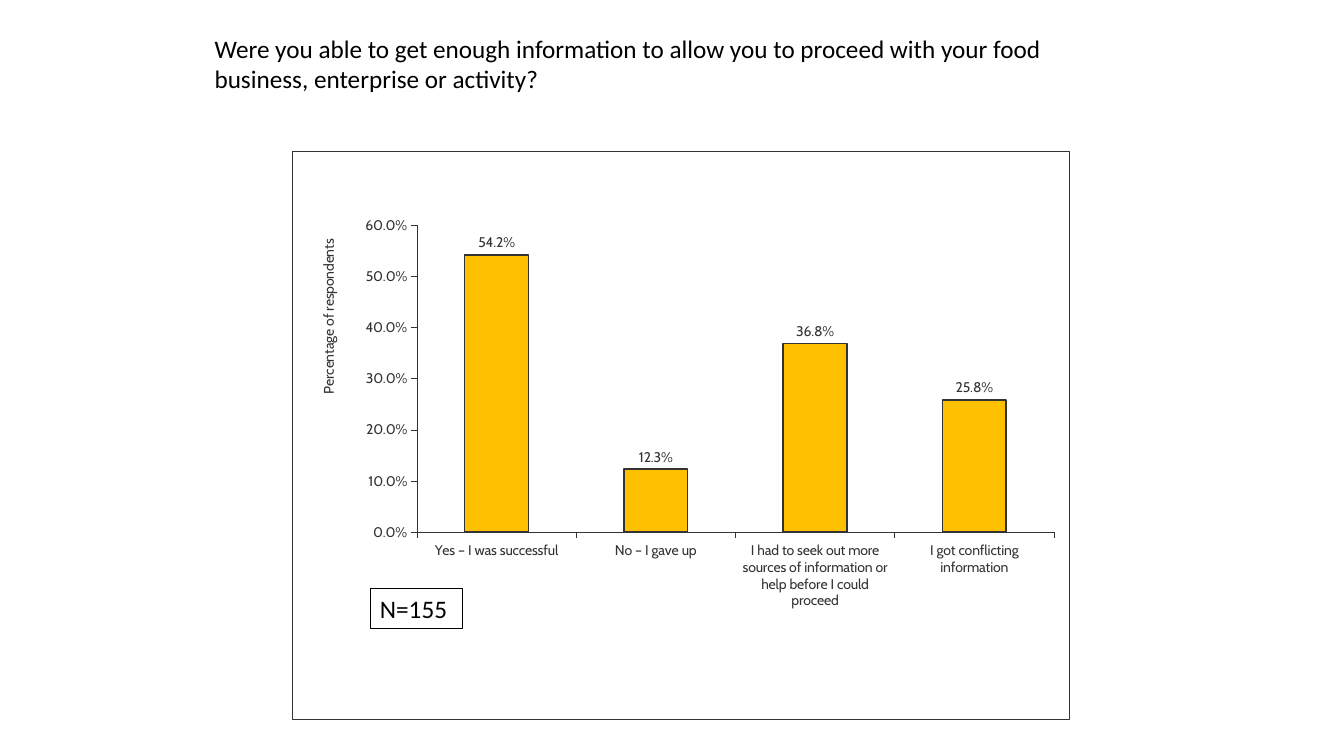
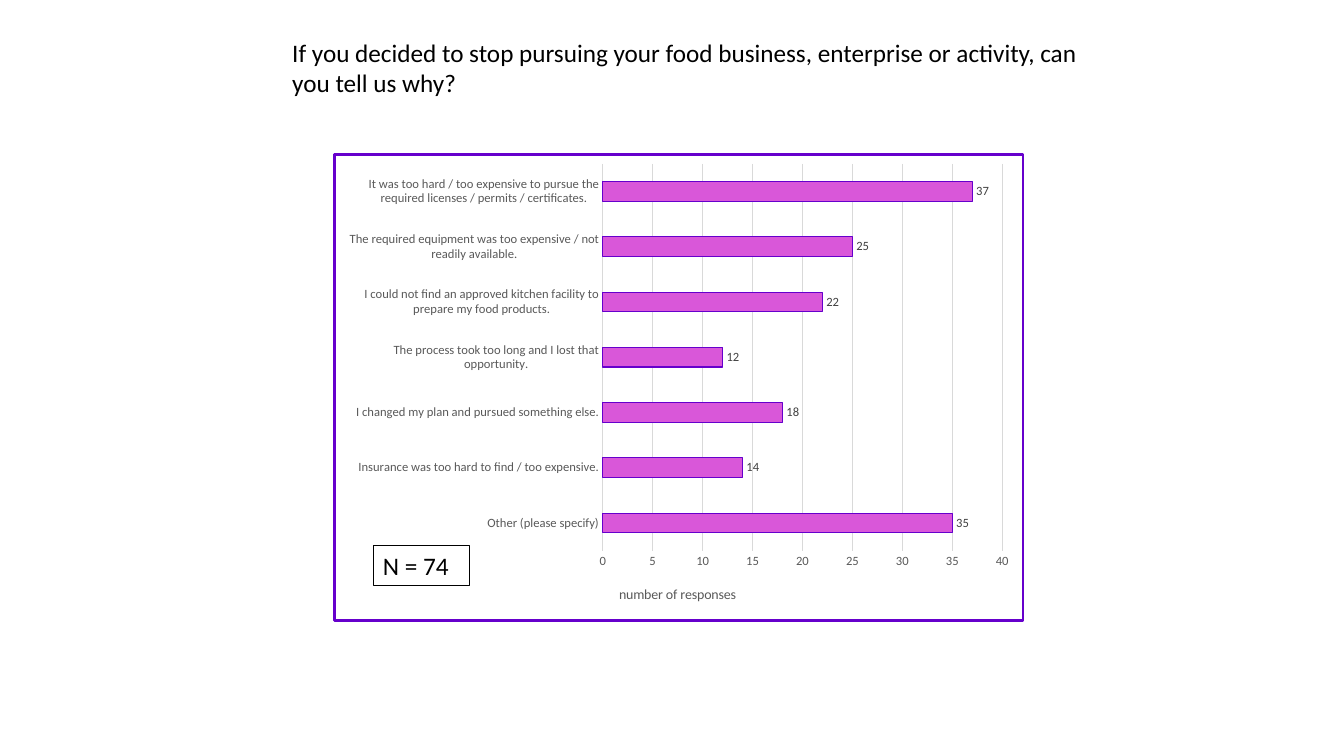
from pptx import Presentation
from pptx.chart.data import CategoryChartData
from pptx.dml.color import RGBColor
from pptx.enum.chart import XL_CHART_TYPE, XL_LABEL_POSITION, XL_TICK_MARK
from pptx.oxml import parse_xml
from pptx.oxml.ns import nsdecls, qn
from pptx.util import Inches, Pt

BLACK = "000000"
SIZE = 18
FONT = "Calibri"


def paint(font, face, size, tone):
    font.name, font.size, font.bold = face, Pt(size), False
    font.color.rgb = RGBColor.from_string(tone)


def place(node, spot, index, inner=False):
    """Give a plot area or an axis title a fixed place, as parts of the chart."""
    for old in node.findall(qn("c:layout")):
        node.remove(old)
    rows = '<c:layoutTarget val="inner"/>' if inner else ""
    rows += '<c:xMode val="edge"/><c:yMode val="edge"/>'
    rows += "".join(f'<c:{key} val="{part}"/>' for key, part in zip("xywh", spot))
    node.insert(index, parse_xml(
        f'<c:layout {nsdecls("c")}><c:manualLayout>{rows}</c:manualLayout></c:layout>'))


SLIDES = [
    dict(
        title="Were you able to get enough information to allow you to proceed "
              "with your food business, enterprise or activity?",
        head=(2.03, 0.28, 8.77, 0.71),
        count="N=155", box=(3.67, 5.84, 0.92, 0.4),
        kind=XL_CHART_TYPE.COLUMN_CLUSTERED, at=(2.9, 1.5, 7.71, 5.64),
        plot=(0.16, 0.13, 0.82, 0.54),
        data=[
            ("Yes – I was successful", 0.542),
            ("No – I gave up", 0.123),
            ("I had to seek out more sources of information or help "
             "before I could proceed", 0.368),
            ("I got conflicting information", 0.258),
        ],
        form="0.0%", top=0.6, step=0.1, gap=150,
        bar="FFC000", edge="333333", thick=1, frame=0.25,
        face="Cabin", size=10, tone="333333", mark="333333",
        tick=XL_TICK_MARK.OUTSIDE, base=("333333", 0.25), grid=None,
        label="Percentage of respondents", spot=(0.03, 0.15), turn=-90,
    ),
    dict(
        title="If you decided to stop pursuing your food business, enterprise "
              "or activity, can you tell us why?",
        head=(2.8, 0.32, 8.12, 0.71),
        count="N = 74", box=(3.7, 5.41, 0.96, 0.4),
        kind=XL_CHART_TYPE.BAR_CLUSTERED, at=(3.3, 1.52, 6.86, 4.65),
        plot=(0.39, 0.02, 0.58, 0.83),
        data=[
            ("Other (please specify)", 35),
            ("Insurance was too hard to find / too expensive.", 14),
            ("I changed my plan and pursued something else.", 18),
            ("The process took too long and I lost that opportunity.", 12),
            ("I could not find an approved kitchen facility to prepare "
             "my food products.", 22),
            ("The required equipment was too expensive / not readily available.", 25),
            ("It was too hard / too expensive to pursue the required "
             "licenses / permits / certificates.", 37),
        ],
        form="0", top=40, step=5, gap=182,
        bar="D957D9", edge="6600CC", thick=0.75, frame=2,
        face="Calibri", size=9, tone="595959", mark="404040",
        tick=XL_TICK_MARK.NONE, base=("D9D9D9", 0.75), grid="D9D9D9",
        label="number of responses", spot=(0.41, 0.92), turn=0,
    ),
]

deck = Presentation()
deck.slide_width, deck.slide_height = Inches(13.33), Inches(7.5)

for page in SLIDES:
    slide = deck.slides.add_slide(deck.slide_layouts[6])

    # Chart with its data
    data = CategoryChartData(number_format=page["form"])
    data.categories = [name for name, _ in page["data"]]
    data.add_series("Series 1", [value for _, value in page["data"]])
    chart = slide.shapes.add_chart(
        page["kind"], *map(Inches, page["at"]), data).chart
    chart.has_title = chart.has_legend = False
    face, size, tone = page["face"], page["size"], page["tone"]
    paint(chart.font, face, size, tone)
    place(chart.plots[0]._element.getparent(), page["plot"], 0, inner=True)

    # Chart frame
    chart._chartSpace.find(qn("c:chart")).addnext(parse_xml(
        f'<c:spPr {nsdecls("c", "a")}><a:solidFill><a:srgbClr val="FFFFFF"/></a:solidFill>'
        f'<a:ln w="{Pt(page["frame"])}"><a:solidFill><a:srgbClr val="{page["edge"]}"/>'
        '</a:solidFill></a:ln></c:spPr>'))

    # Bars and value labels
    plot = chart.plots[0]
    plot.gap_width, plot.vary_by_categories = page["gap"], False
    bars = plot.series[0].format
    bars.fill.solid()
    bars.fill.fore_color.rgb = RGBColor.from_string(page["bar"])
    bars.line.color.rgb = RGBColor.from_string(page["edge"])
    bars.line.width = Pt(page["thick"])
    plot.has_data_labels = True
    marks = plot.data_labels
    marks.show_value, marks.position = True, XL_LABEL_POSITION.OUTSIDE_END
    marks.number_format, marks.number_format_is_linked = page["form"], False
    paint(marks.font, face, size, page["mark"])

    # Axes
    cats, vals = chart.category_axis, chart.value_axis
    for axis in (cats, vals):
        axis.major_tick_mark, axis.minor_tick_mark = page["tick"], XL_TICK_MARK.NONE
        axis.format.line.color.rgb = RGBColor.from_string(page["base"][0])
        axis.format.line.width = Pt(page["base"][1])
        paint(axis.tick_labels.font, face, size, tone)
    vals.minimum_scale, vals.maximum_scale = 0, page["top"]
    vals.major_unit = page["step"]
    vals.tick_labels.number_format = page["form"]
    vals.tick_labels.number_format_is_linked = False
    vals.has_major_gridlines = bool(page["grid"])
    if page["grid"]:
        vals.format.line.fill.background()
        vals.major_gridlines.format.line.color.rgb = RGBColor.from_string(page["grid"])
        vals.major_gridlines.format.line.width = Pt(0.75)

    # Value axis title
    title = vals.axis_title
    frame = title.text_frame
    frame.text = page["label"]
    paint(frame.paragraphs[0].runs[0].font, face, 10, tone)
    frame._txBody.bodyPr.set("rot", str(page["turn"] * 60000))
    frame._txBody.bodyPr.set("vert", "horz")
    place(title._element, page["spot"], 1)

    # Question and sample size
    for text, at in ((page["title"], page["head"]), (page["count"], page["box"])):
        box = slide.shapes.add_textbox(*map(Inches, at))
        box.text_frame.word_wrap = True
        box.text_frame.text = text
        paint(box.text_frame.paragraphs[0].runs[0].font, FONT, SIZE, BLACK)
    box.line.color.rgb = RGBColor.from_string(BLACK)
    box.line.width = Pt(0.75)

deck.save("out.pptx")
